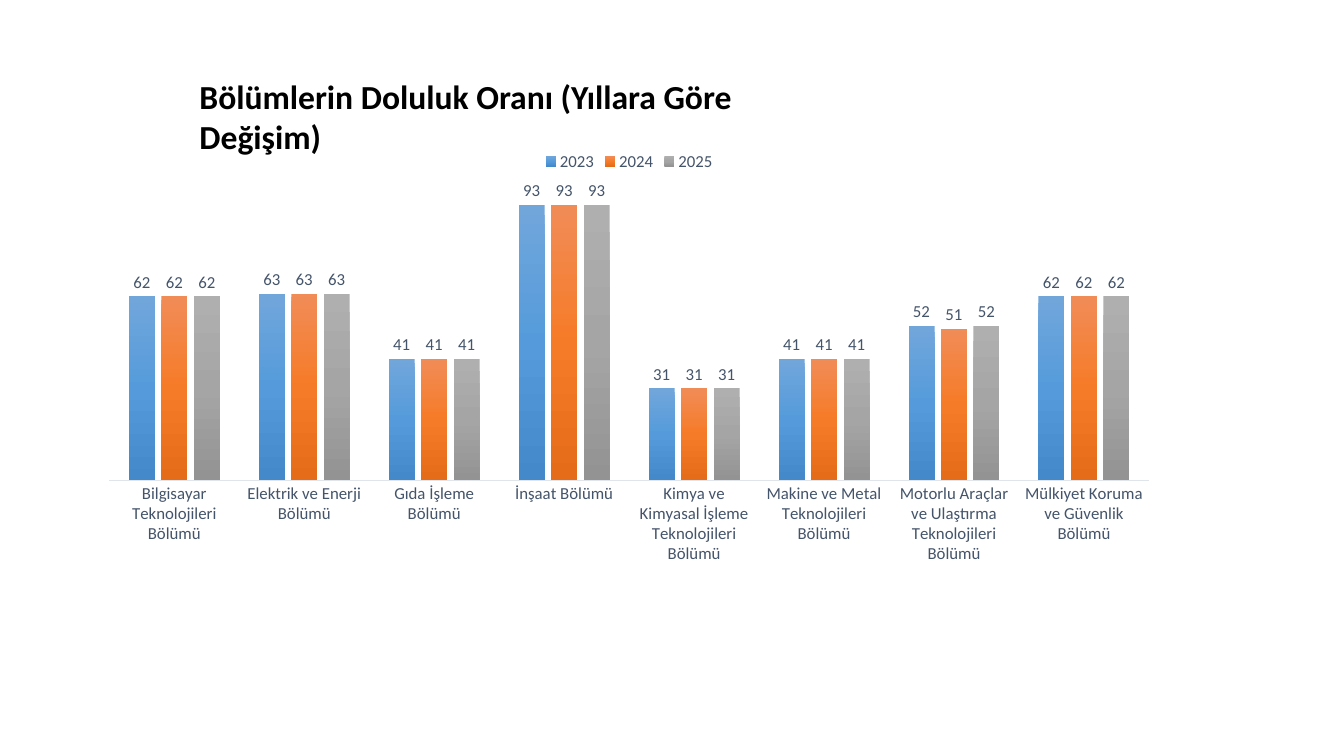
from lxml.etree import SubElement
from pptx import Presentation
from pptx.chart.data import CategoryChartData
from pptx.dml.color import RGBColor
from pptx.enum.chart import XL_CHART_TYPE, XL_LABEL_POSITION, XL_LEGEND_POSITION, XL_TICK_MARK
from pptx.enum.text import MSO_AUTO_SIZE
from pptx.oxml.ns import qn
from pptx.util import Inches, Pt

FACE = "Calibri"
COLORS = {
    "title": "000000",
    "label": "44546A",
    "axis": "E0E5EB",
    "2023": ("71A6DB", "559BDB", "448ACA"),
    "2024": ("F18C57", "F67B28", "E56C19"),
    "2025": ("AFAFAF", "A5A5A5", "939393"),
}
UNITS = [
    "Bilgisayar Teknolojileri Bölümü",
    "Elektrik ve Enerji Bölümü",
    "Gıda İşleme Bölümü",
    "İnşaat Bölümü",
    "Kimya ve Kimyasal İşleme Teknolojileri Bölümü",
    "Makine ve Metal Teknolojileri Bölümü",
    "Motorlu Araçlar ve Ulaştırma Teknolojileri Bölümü",
    "Mülkiyet Koruma ve Güvenlik Bölümü",
]
RATES = {
    "2023": (62, 63, 41, 93, 31, 41, 52, 62),
    "2024": (62, 63, 41, 93, 31, 41, 51, 62),
    "2025": (62, 63, 41, 93, 31, 41, 52, 62),
}


def set_font(font, size, color, bold=False):
    """Set face, size, colour and weight of a font."""
    font.name, font.size, font.bold = FACE, Pt(size), bold
    font.color.rgb = RGBColor.from_string(COLORS[color])


def add_title(slide, text):
    """Add the bold heading."""
    box = slide.shapes.add_textbox(Inches(1.88), Inches(0.7), Inches(6.46), Inches(0.5))
    frame = box.text_frame
    frame.word_wrap = True
    frame.auto_size = MSO_AUTO_SIZE.SHAPE_TO_FIT_TEXT
    para = frame.paragraphs[0]
    para.text = text
    set_font(para.font, 24, "title", True)


def shade(series, hues):
    """Fill a series with a vertical gradient of evenly spaced hues."""
    props = series.format.fill
    props.gradient()
    grad = series.format._element.find(".//" + qn("a:gradFill")) if hasattr(series.format, "_element") else \
        series._element.find(".//" + qn("a:gradFill"))
    for child in list(grad):
        grad.remove(child)
    stops = SubElement(grad, qn("a:gsLst"))
    for rank, hue in enumerate(hues):
        stop = SubElement(stops, qn("a:gs"), pos=str(rank * 50000))
        SubElement(stop, qn("a:srgbClr"), val=hue)
    SubElement(grad, qn("a:lin"), ang="5400000", scaled="0")


def style_axes(chart):
    """Show the category axis alone, with a pale line."""
    units = chart.category_axis
    units.major_tick_mark = units.minor_tick_mark = XL_TICK_MARK.NONE
    set_font(units.tick_labels.font, 12, "label")
    units.format.line.color.rgb = RGBColor.from_string(COLORS["axis"])
    units.format.line.width = Pt(0.75)
    rates = chart.value_axis
    rates.has_major_gridlines = False
    rates.visible = False
    rates.minimum_scale, rates.maximum_scale = 0, 100


def add_bars(slide):
    """Add the clustered columns of rates by unit and year."""
    data = CategoryChartData()
    data.categories = UNITS
    for year, rates in RATES.items():
        data.add_series(year, rates)
    chart = slide.shapes.add_chart(
        XL_CHART_TYPE.COLUMN_CLUSTERED,
        Inches(0.87), Inches(1.39), Inches(10.74), Inches(4.29), data,
    ).chart
    set_font(chart.font, 10, "title")
    chart.has_title = False
    chart.has_legend = True
    chart.legend.position = XL_LEGEND_POSITION.TOP
    chart.legend.include_in_layout = False
    set_font(chart.legend.font, 12, "label")
    style_axes(chart)
    plot = chart.plots[0]
    plot.gap_width, plot.overlap, plot.vary_by_categories = 150, -25, False
    for series in plot.series:
        shade(series, COLORS[series.name])
        labels = series.data_labels
        labels.show_value = True
        labels.position = XL_LABEL_POSITION.OUTSIDE_END
        set_font(labels.font, 12, "label")


def main():
    """Build and save the slide."""
    deck = Presentation()
    deck.slide_width, deck.slide_height = Inches(13.33), Inches(7.5)
    slide = deck.slides.add_slide(deck.slide_layouts[6])
    add_title(slide, "Bölümlerin Doluluk Oranı (Yıllara Göre Değişim)")
    add_bars(slide)
    deck.save("out.pptx")


if __name__ == "__main__":
    main()
